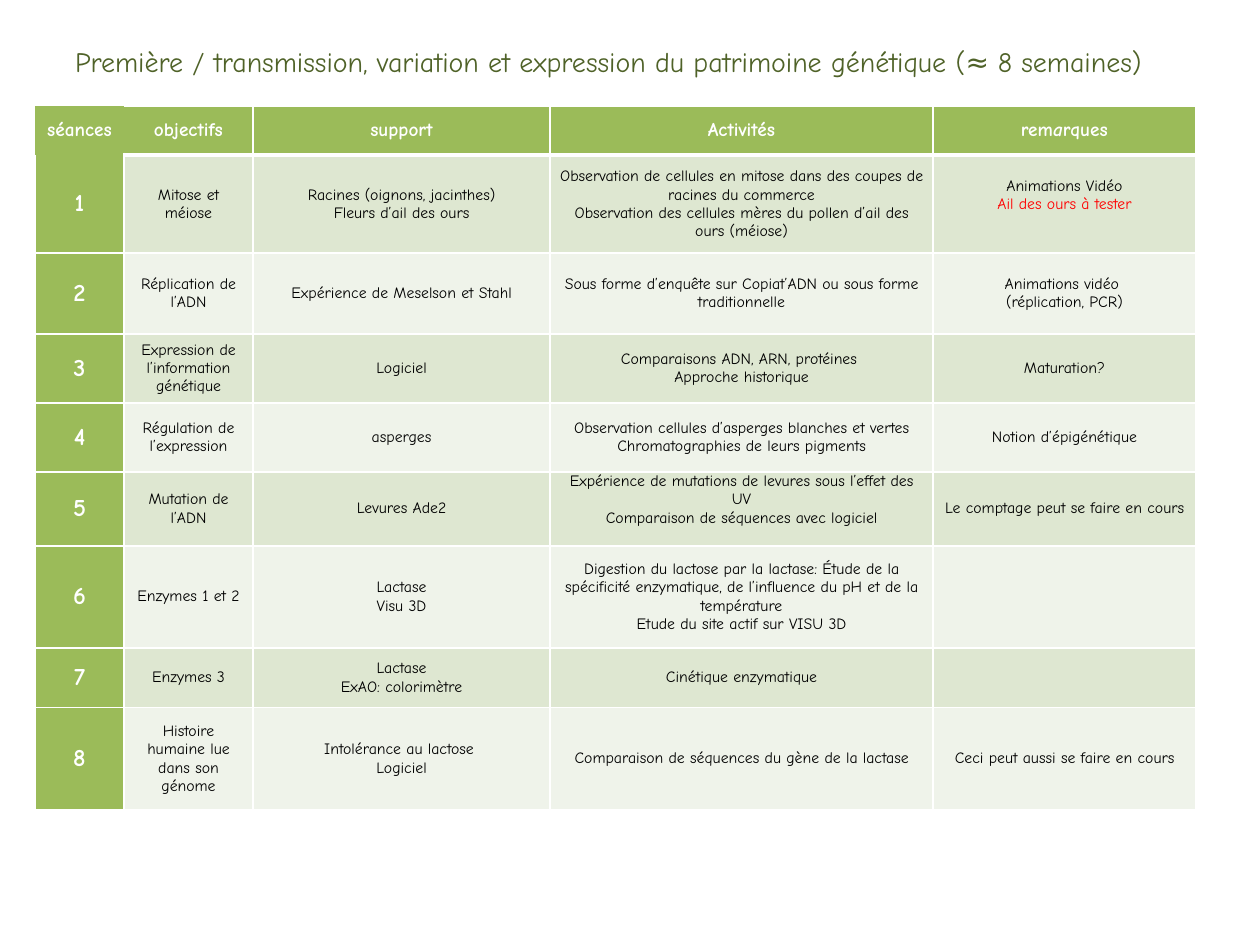
import pptx
import pptx.dml.color
import pptx.enum.text
import pptx.oxml.ns
import pptx.util
from lxml import etree

SCALE = 914400 / 126
FONT = "Comic Neue"
COLORS = {
    "green": "9BBB59",
    "dark green": "4F6228",
    "band": "DEE7D1",
    "light": "EFF3EA",
    "white": "FFFFFF",
    "black": "000000",
    "red": "FF0000",
}
COLUMNS = [89, 129, 297, 383, 263]
HEIGHTS = [49, 98, 81, 69, 69, 74, 102, 60, 102]
RAISED_CELLS = {(1, 4), (5, 3)}
HEADER = [
    ["séances"], ["objectifs"], ["support"], ["Activités"],
    [[("rem", {}), ("a", {"italic": True}), ("rques", {})]],
]
SESSIONS = [
    [["Mitose et méiose"],
     ["Racines (oignons, jacinthes)", "Fleurs d’ail des ours"],
     ["Observation de cellules en mitose dans des coupes de racines du commerce",
      "Observation des cellules mères du pollen d’ail des ours (méiose)"],
     ["Animations Vidéo", [("Ail des ours à tester", {"color": "red"})]]],
    [["Réplication de l’ADN"],
     ["Expérience de Meselson et Stahl"],
     ["Sous forme d’enquête sur Copiat’ADN ou sous forme traditionnelle"],
     ["Animations vidéo ", "(réplication, PCR)"]],
    [["Expression de l’information génétique"],
     ["Logiciel"],
     ["Comparaisons ADN, ARN, protéines ", "Approche historique"],
     ["Maturation?"]],
    [["Régulation de l’expression"],
     ["asperges"],
     ["Observation cellules d’asperges blanches et vertes",
      "Chromatographies de leurs pigments"],
     ["Notion d’épigénétique"]],
    [["Mutation de l’ADN"],
     ["Levures Ade2"],
     ["Expérience de mutations de levures sous l’effet des UV",
      "Comparaison de séquences avec logiciel"],
     ["Le comptage peut se faire en cours"]],
    [["Enzymes 1 et 2"],
     ["Lactase", "Visu 3D"],
     ["Digestion du lactose par la lactase: Étude de la spécificité enzymatique, "
      "de l’influence du pH et de la température",
      "Etude du site actif sur VISU 3D"],
     []],
    [["Enzymes 3"],
     ["Lactase", "ExAO: colorimètre"],
     ["Cinétique enzymatique"],
     []],
    [["Histoire humaine lue dans son génome"],
     ["Intolérance au lactose ", "Logiciel"],
     ["Comparaison de séquences du gène de la lactase"],
     ["Ceci peut aussi se faire en cours"]],
]


def emu(pixels):
    """Turn pixels into EMU."""
    return pptx.util.Emu(round(pixels * SCALE))


def rgb(name):
    """Look up a colour by name."""
    return pptx.dml.color.RGBColor.from_string(COLORS[name])


def add_span(para, text, size, color, bold=False, italic=False):
    """Add one formatted run to a paragraph."""
    span = para.add_run()
    span.text = text
    font = span.font
    font.name, font.size = FONT, pptx.util.Pt(size)
    font.bold, font.italic = bold, italic
    font.color.rgb = rgb(color)


def set_borders(cell, widths):
    """Give a cell white borders of the given point widths, zero meaning none."""
    properties = cell._tc.get_or_add_tcPr()
    for place, side in enumerate("LRTB"):
        line = etree.Element(pptx.oxml.ns.qn(f"a:ln{side}"))
        line.set("w", str(pptx.util.Pt(widths[side])))
        if widths[side]:
            fill = etree.SubElement(line, pptx.oxml.ns.qn("a:solidFill"))
            color = etree.SubElement(fill, pptx.oxml.ns.qn("a:srgbClr"))
            color.set("val", COLORS["white"])
        else:
            etree.SubElement(line, pptx.oxml.ns.qn("a:noFill"))
        properties.insert(place, line)


def border_widths(row, column):
    """Work out the border widths of the cell at a grid position."""
    widths = dict.fromkeys("LRTB", 1)
    if column == 0 and row == 0:
        return dict.fromkeys("LRTB", 0)
    if row == 0:
        widths["B"] = 3
        if column == 1:
            widths["L"] = 0
    elif row == 1:
        widths["T"] = 3 if column else 0
    return widths


def fill_cell(cell, paragraphs, fill, style):
    """Fill a cell with colour and centred paragraphs."""
    cell.fill.solid()
    cell.fill.fore_color.rgb = rgb(fill)
    cell.vertical_anchor = pptx.enum.text.MSO_ANCHOR.MIDDLE
    cell.margin_left = cell.margin_right = emu(8)
    cell.margin_top = cell.margin_bottom = 0
    frame = cell.text_frame
    for index, content in enumerate(paragraphs):
        para = frame.add_paragraph() if index else frame.paragraphs[0]
        para.alignment = pptx.enum.text.PP_ALIGN.CENTER
        spans = [(content, {})] if isinstance(content, str) else content
        for text, changes in spans:
            add_span(para, text, **{**style, **changes})
    if not paragraphs:
        frame.paragraphs[0].font.size = pptx.util.Pt(style["size"])


def add_title(page, left, top, width, height):
    """Place the slide title in the given box."""
    box = page.shapes.title
    box.left, box.top, box.width, box.height = map(emu, (left, top, width, height))
    frame = box.text_frame
    frame.auto_size = pptx.enum.text.MSO_AUTO_SIZE.NONE
    frame.word_wrap = False
    frame.vertical_anchor = pptx.enum.text.MSO_ANCHOR.TOP
    frame.margin_left, frame.margin_top = emu(75), emu(25)
    frame.margin_bottom = 0
    para = frame.paragraphs[0]
    para.alignment = pptx.enum.text.PP_ALIGN.LEFT
    add_span(para,
             "Première / transmission, variation et expression du patrimoine "
             "génétique (≈ 8 semaines)", 16, "dark green")


def add_schedule(page, left, top):
    """Place the table of sessions with its corner at the given point."""
    rows = [HEADER] + [[[str(number)]] + session
                       for number, session in enumerate(SESSIONS, 1)]
    box = page.shapes.add_table(len(rows), len(COLUMNS), emu(left), emu(top),
                                emu(sum(COLUMNS)), emu(sum(HEIGHTS)))
    table = box.table
    table.first_row = table.horz_banding = False
    for column, width in enumerate(COLUMNS):
        table.columns[column].width = emu(width)
    for row, contents in enumerate(rows):
        table.rows[row].height = emu(HEIGHTS[row])
        for column, paragraphs in enumerate(contents):
            cell = table.cell(row, column)
            if row == 0 or column == 0:
                fill = "green"
                style = {"size": 14 if row else 11, "color": "white", "bold": True}
            else:
                fill = "band" if row % 2 else "light"
                style = {"size": 9, "color": "black"}
            fill_cell(cell, paragraphs, fill, style)
            if (row, column) in RAISED_CELLS:
                cell.margin_bottom = emu(18)
            set_borders(cell, border_widths(row, column))


def main():
    """Build the deck and save it."""
    deck = pptx.Presentation()
    deck.slide_width, deck.slide_height = emu(1260), emu(945)
    page = deck.slides.add_slide(deck.slide_layouts[5])
    add_schedule(page, 35, 106)
    add_title(page, 0, 20, 1242, 93)
    deck.save("out.pptx")


if __name__ == "__main__":
    main()
